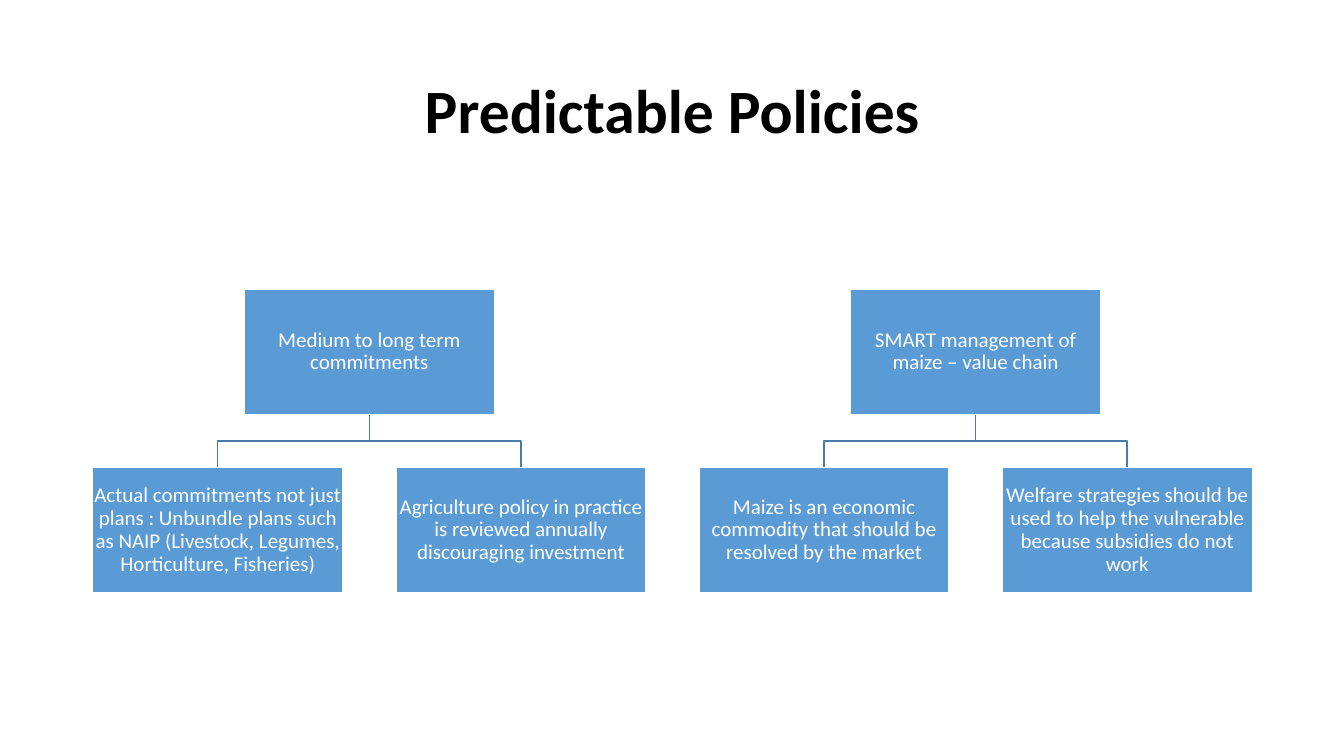
import pptx
import pptx.util
import pptx.dml.color
import pptx.enum.shapes
import pptx.enum.text
from pptx.util import Inches, Pt
from pptx.dml.color import RGBColor

TITLE = "Predictable Policies"
POLICIES = [
    ("Medium to long term commitments", [
        "Actual commitments not just plans : Unbundle plans such as NAIP "
        "(Livestock, Legumes, Horticulture, Fisheries)",
        "Agriculture policy in practice is reviewed annually discouraging investment",
    ]),
    ("SMART management of maize – value chain", [
        "Maize is an economic commodity that should be resolved by the market",
        "Welfare strategies should be used to help the vulnerable because "
        "subsidies do not work",
    ]),
]

FONT = "Calibri"
BLACK = RGBColor(0x00, 0x00, 0x00)
WHITE = RGBColor(0xFF, 0xFF, 0xFF)
BOX_BLUE = RGBColor(0x5B, 0x9B, 0xD5)
BRANCH_BLUE = RGBColor(0x49, 0x7C, 0xAB)

LEFT, CONTENT_WIDTH = Inches(0.92), Inches(11.5)
BOX_WIDTH, BOX_HEIGHT = Inches(2.48), Inches(1.24)
POLICY_TOP, DETAIL_TOP = Inches(2.87), Inches(4.64)
INSET = Inches(0.01)
detail_count = sum(len(details) for _, details in POLICIES)
PITCH = (CONTENT_WIDTH - BOX_WIDTH) / (detail_count - 1)


def write(shape, text, size, color, bold=False):
    """Put centred text in a shape, wrapped and anchored in the middle."""
    frame = shape.text_frame
    frame.text = text
    frame.word_wrap = True
    frame.vertical_anchor = pptx.enum.text.MSO_ANCHOR.MIDDLE
    paragraph = frame.paragraphs[0]
    paragraph.alignment = pptx.enum.text.PP_ALIGN.CENTER
    paragraph.line_spacing = 0.9
    font = paragraph.runs[0].font
    font.name, font.size, font.bold = FONT, Pt(size), bold
    font.color.rgb = color


def add_box(slide, center, top, text):
    box = slide.shapes.add_shape(
        pptx.enum.shapes.MSO_SHAPE.RECTANGLE,
        round(center - BOX_WIDTH / 2), top, BOX_WIDTH, BOX_HEIGHT)
    box.shadow.inherit = False
    box.fill.solid()
    box.fill.fore_color.rgb = BOX_BLUE
    box.line.color.rgb = WHITE
    box.line.width = Pt(1)
    frame = box.text_frame
    frame.margin_left = frame.margin_right = INSET
    frame.margin_top = frame.margin_bottom = INSET
    write(box, text, 15, WHITE)


def add_branch(slide, policy_center, detail_center):
    """Draw the elbow line from a policy down to one of its details."""
    start = POLICY_TOP + BOX_HEIGHT
    middle = (start + DETAIL_TOP) // 2
    start_x, end_x = round(policy_center), round(detail_center)
    outline = slide.shapes.build_freeform(start_x, start)
    outline.add_line_segments(
        [(start_x, middle), (end_x, middle), (end_x, DETAIL_TOP)], close=False)
    branch = outline.convert_to_shape()
    branch.shadow.inherit = False
    branch.fill.background()
    branch.line.color.rgb = BRANCH_BLUE
    branch.line.width = Pt(1)


def main():
    deck = pptx.Presentation()
    deck.slide_width, deck.slide_height = Inches(13.33), Inches(7.5)
    slide = deck.slides.add_slide(deck.slide_layouts[6])

    title = slide.shapes.add_textbox(LEFT, Inches(0.4), CONTENT_WIDTH, Inches(1.45))
    write(title, TITLE, 44, BLACK, bold=True)

    column = 0
    for policy, details in POLICIES:
        centers = [LEFT + BOX_WIDTH / 2 + (column + i) * PITCH
                   for i in range(len(details))]
        column += len(details)
        policy_center = sum(centers) / len(centers)
        for center in centers:
            add_branch(slide, policy_center, center)
        add_box(slide, policy_center, POLICY_TOP, policy)
        for center, detail in zip(centers, details):
            add_box(slide, center, DETAIL_TOP, detail)

    deck.save("out.pptx")


if __name__ == "__main__":
    main()
